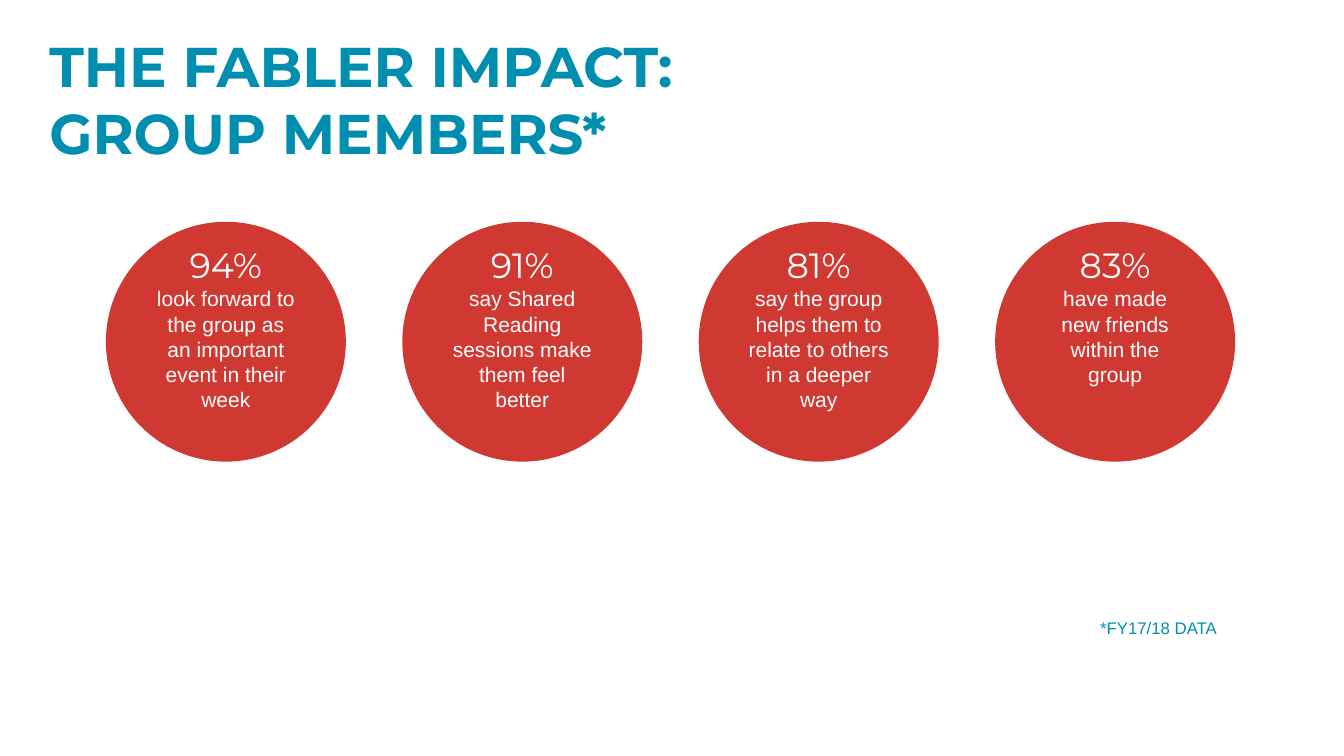
"""Build the group member impact slide with four statistic circles."""
from pptx import Presentation
from pptx.dml.color import RGBColor
from pptx.enum.shapes import MSO_SHAPE
from pptx.enum.text import MSO_ANCHOR, MSO_AUTO_SIZE, PP_ALIGN
from pptx.util import Inches, Pt

COLORS = {"teal": "008EB0", "red": "D03931", "white": "FFFFFF"}
HEADING_FONT = "Montserrat"
BODY_FONT = "Arial"
STATISTICS = [
    ("94%", "look forward to the group as an important event in their week"),
    ("91%", "say Shared Reading sessions make them feel better"),
    ("81%", "say the group helps them to relate to others in a deeper way"),
    ("83%", "have made new friends within the group"),
]
FIRST_LEFT, CIRCLE_TOP, DIAMETER, PITCH = 1.05, 2.2, 2.38, 2.94
LABEL_WIDTH, LABEL_HEIGHT, LABEL_TOP = 1.63, 1.78, 2.37


def color(name):
    return RGBColor.from_string(COLORS[name])


def write_paragraph(paragraph, text, font_name, size, color_name, alignment, bold=False):
    paragraph.text = text
    paragraph.alignment = alignment
    paragraph.font.name = font_name
    paragraph.font.size = Pt(size)
    paragraph.font.bold = bold
    paragraph.font.color.rgb = color(color_name)


def add_text_frame(slide, left, top, width, height):
    text_box = slide.shapes.add_textbox(Inches(left), Inches(top), Inches(width), Inches(height))
    text_box.text_frame.word_wrap = True
    return text_box.text_frame


def format_title(slide, text):
    title = slide.shapes.title
    title.left, title.top = Inches(0.39), Inches(0.26)
    title.width, title.height = Inches(7.83), Inches(1.45)
    frame = title.text_frame
    frame.word_wrap = True
    frame.auto_size = MSO_AUTO_SIZE.NONE
    frame.vertical_anchor = MSO_ANCHOR.TOP
    write_paragraph(frame.paragraphs[0], text, HEADING_FONT, 40, "teal", PP_ALIGN.LEFT, bold=True)


def add_statistic(slide, left, percentage, statement):
    circle = slide.shapes.add_shape(
        MSO_SHAPE.OVAL, Inches(left), Inches(CIRCLE_TOP), Inches(DIAMETER), Inches(DIAMETER))
    circle.shadow.inherit = False
    circle.fill.solid()
    circle.fill.fore_color.rgb = color("red")
    circle.line.fill.background()
    label_left = left + (DIAMETER - LABEL_WIDTH) / 2
    frame = add_text_frame(slide, label_left, LABEL_TOP, LABEL_WIDTH, LABEL_HEIGHT)
    write_paragraph(frame.paragraphs[0], percentage, HEADING_FONT, 25, "white", PP_ALIGN.CENTER)
    write_paragraph(frame.add_paragraph(), statement, BODY_FONT, 15, "white", PP_ALIGN.CENTER)


def add_footnote(slide, text):
    paragraph = add_text_frame(slide, 0.67, 6.1, 11.5, 0.46).paragraphs[0]
    write_paragraph(paragraph, text, BODY_FONT, 12, "teal", PP_ALIGN.RIGHT)
    paragraph.line_spacing = 0.9


def main():
    presentation = Presentation()
    presentation.slide_width, presentation.slide_height = Inches(13.33), Inches(7.5)
    slide = presentation.slides.add_slide(presentation.slide_layouts.get_by_name("Title Only"))
    format_title(slide, "THE FABLER IMPACT: GROUP MEMBERS*")
    for index, (percentage, statement) in enumerate(STATISTICS):
        add_statistic(slide, FIRST_LEFT + index * PITCH, percentage, statement)
    add_footnote(slide, "*FY17/18 DATA")
    presentation.save("out.pptx")


if __name__ == "__main__":
    main()
